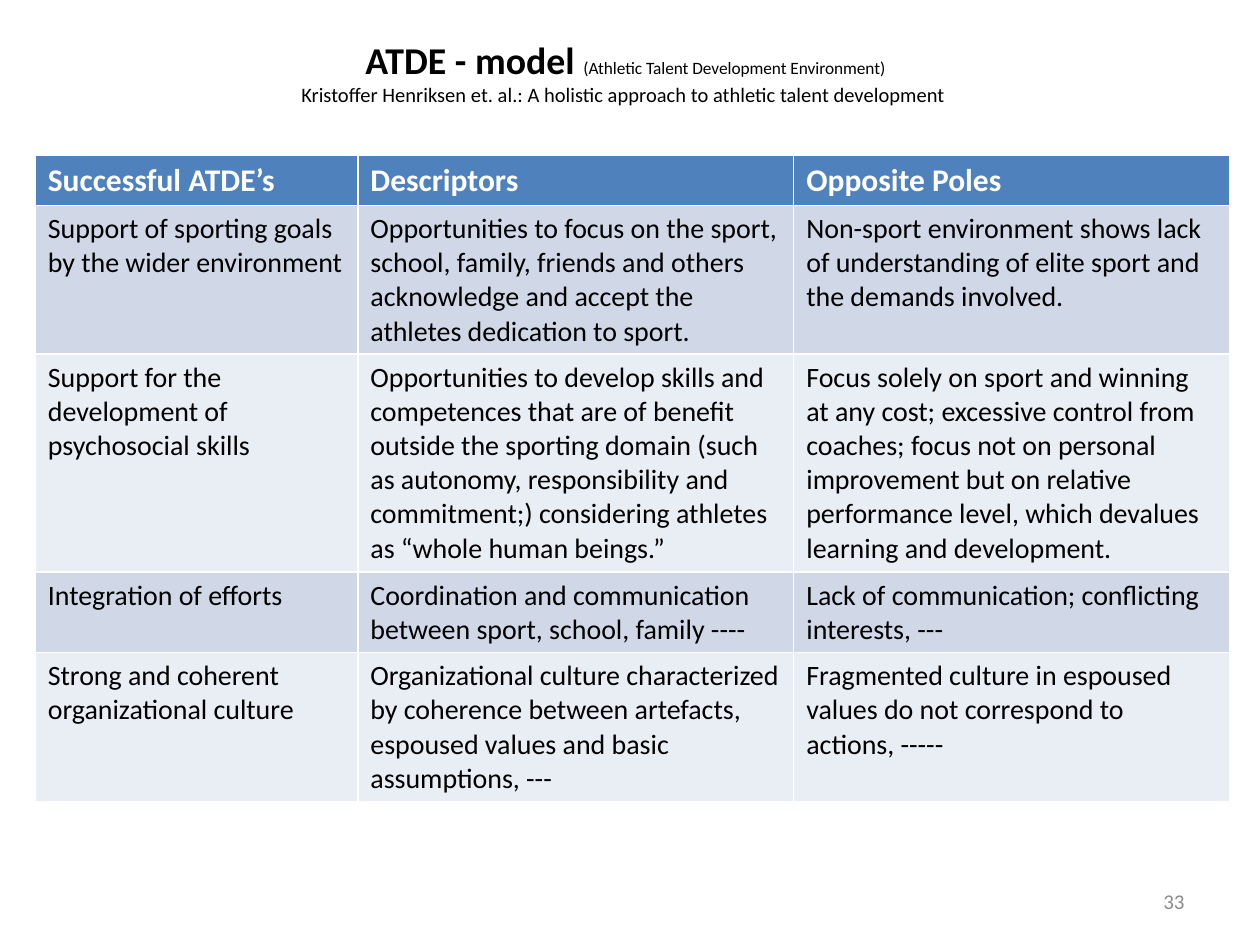
from pptx import Presentation
from pptx.dml.color import RGBColor
from pptx.enum import text
from pptx.util import Inches, Pt

FONT = "Calibri"
BLACK, WHITE, GREY = "000000", "FFFFFF", "8C8C8C"
HEADER_FILL, BAND_FILLS = "4F81BD", ("D0D8E8", "E9EDF4")

COLUMN_WIDTHS = (2.56, 3.46, 3.46)
ROW_HEIGHTS = (0.4, 1.18, 1.73, 0.64, 1.18)
ROWS = (
    ("Successful ATDE’s", "Descriptors", "Opposite Poles"),
    ("Support of sporting goals by the wider environment",
     "Opportunities to focus on the sport, school, family, friends and others "
     "acknowledge and accept the athletes dedication to sport.",
     "Non-sport environment shows lack of understanding of elite sport and the "
     "demands involved."),
    ("Support for the development of psychosocial skills",
     "Opportunities to develop skills and competences that are of benefit outside "
     "the sporting domain (such as autonomy, responsibility and commitment;) "
     "considering athletes as “whole human beings.”",
     "Focus solely on sport and winning at any cost; excessive control from "
     "coaches; focus not on personal improvement but on relative performance "
     "level, which devalues learning and development."),
    ("Integration of efforts",
     "Coordination and communication between sport, school, family ----",
     "Lack of communication; conflicting interests, ---"),
    ("Strong and coherent organizational culture",
     "Organizational culture characterized by coherence between artefacts, "
     "espoused values and basic assumptions, ---",
     "Fragmented culture in espoused values do not correspond to actions, -----"),
)


def rgb(color):
    return RGBColor.from_string(color)


def add_run(paragraph, wording, size, color=BLACK, bold=False):
    run = paragraph.add_run()
    run.text = wording
    for name, value in {"name": FONT, "size": Pt(size), "bold": bold}.items():
        setattr(run.font, name, value)
    run.font.color.rgb = rgb(color)


def add_text_line(slide, left, top, width, height, align):
    """Add a wrapping, vertically centred text box and return its paragraph."""
    box = slide.shapes.add_textbox(*map(Inches, (left, top, width, height)))
    frame = box.text_frame
    frame.word_wrap = True
    frame.vertical_anchor = text.MSO_ANCHOR.MIDDLE
    paragraph = frame.paragraphs[0]
    paragraph.alignment = align
    return paragraph


def add_title(slide):
    title = add_text_line(slide, 0.28, 0.21, 9.37, 0.71, text.PP_ALIGN.CENTER)
    add_run(title, "ATDE - model ", 21.6, bold=True)
    add_run(title, "(Athletic Talent Development Environment)", 9.9)
    title.add_line_break()
    add_run(title, "Kristoffer Henriksen et. al.: A holistic approach to "
                   "athletic talent development ", 11.7)


def add_comparison_table(slide):
    frame = slide.shapes.add_table(
        len(ROWS), len(COLUMN_WIDTHS), Inches(0.28), Inches(1.23),
        Inches(sum(COLUMN_WIDTHS)), Inches(sum(ROW_HEIGHTS)))
    table = frame.table
    for column, width in zip(table.columns, COLUMN_WIDTHS):
        column.width = Inches(width)
    for index, (row, height, wordings) in enumerate(zip(table.rows, ROW_HEIGHTS, ROWS)):
        row.height = Inches(height)
        header = index == 0
        fill = HEADER_FILL if header else BAND_FILLS[(index - 1) % 2]
        size, color = (18, WHITE) if header else (16, BLACK)
        for cell, wording in zip(row.cells, wordings):
            cell.fill.solid()
            cell.fill.fore_color.rgb = rgb(fill)
            add_run(cell.text_frame.paragraphs[0], wording, size, color, bold=header)


def add_page_number(slide):
    number = add_text_line(slide, 7.17, 6.95, 2.33, 0.4, text.PP_ALIGN.RIGHT)
    add_run(number, "33", 12, GREY)


def main():
    deck = Presentation()
    deck.slide_width, deck.slide_height = Inches(10), Inches(7.5)
    slide = deck.slides.add_slide(deck.slide_layouts[6])
    add_title(slide)
    add_comparison_table(slide)
    add_page_number(slide)
    deck.save("out.pptx")


if __name__ == "__main__":
    main()
